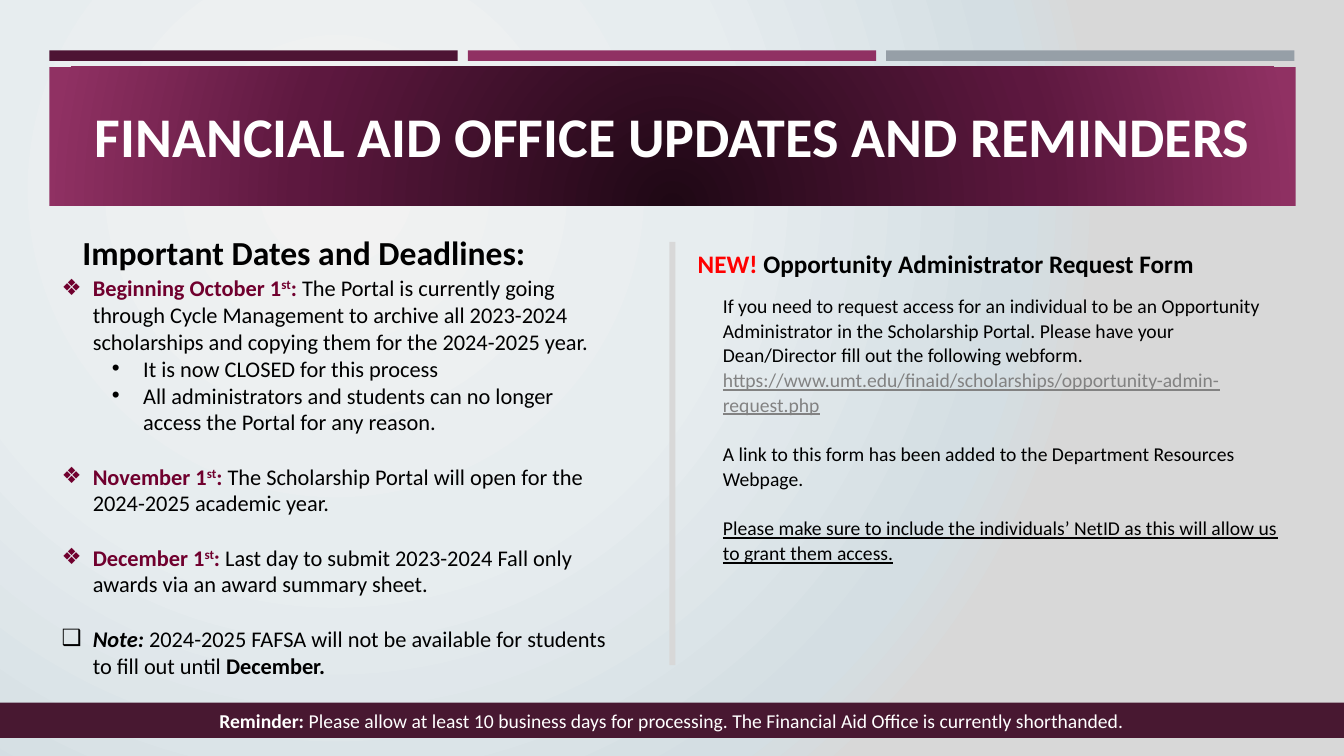
from dataclasses import dataclass, field
from typing import Any

from lxml import etree
from pptx import Presentation
from pptx import util as u
from pptx.dml import color
from pptx.enum import shapes, text
from pptx.oxml import ns

PLUM, MAGENTA, GREY = "4D1434", "903163", "969FA7"
BLACK, WHITE, WINE, SILVER = "000000", "FFFFFF", "70002E", "D8D8D8"


@dataclass
class Box:
    left: float
    top: float
    width: float
    height: float


@dataclass
class Run:
    text: str
    color: str = BLACK
    style: dict[str, Any] = field(default_factory=dict)
    raised: bool = False


@dataclass
class Para:
    runs: list[Run]
    size: float = 16
    bullet: str = ""
    margin: float = 0
    hanging: float = 0
    level: int = 0
    fmt: dict[str, Any] = field(default_factory=dict)


@dataclass
class Panel:
    box: Box
    fill: str


@dataclass
class Gradient:
    stops: list[tuple[int, str]]
    focus: tuple[int, int, int, int]


BOLD = {"bold": True}
UNDERLINE = {"underline": True}
LINE_GAP = {"space_before": u.Pt(19.5)}


def rgb(value: str) -> color.RGBColor:
    return color.RGBColor.from_string(value)


def apply(target: Any, values: dict[str, Any]) -> None:
    for name, value in values.items():
        setattr(target, name, value)


def frame(box: Box) -> dict[str, int]:
    return {
        "left": round(prs.slide_width * box.left / 100),
        "top": round(prs.slide_height * box.top / 100),
        "width": round(prs.slide_width * box.width / 100),
        "height": round(prs.slide_height * box.height / 100),
    }


def draw_panel(panel: Panel) -> Any:
    sp = slide.shapes.add_shape(shapes.MSO_SHAPE.RECTANGLE, **frame(panel.box))
    sp.shadow.inherit = False
    sp.fill.solid()
    sp.fill.fore_color.rgb = rgb(panel.fill)
    sp.line.fill.background()
    return sp


def shade(holder: Any, fill: Any, gradient: Gradient) -> None:
    fill.gradient()
    grad = holder.element.find(".//" + ns.qn("a:gradFill"))
    for child in list(grad):
        grad.remove(child)
    stops = etree.SubElement(grad, ns.qn("a:gsLst"))
    for share, value in gradient.stops:
        stop = etree.SubElement(stops, ns.qn("a:gs"), pos=str(share * 1000))
        etree.SubElement(stop, ns.qn("a:srgbClr"), val=value)
    circle = etree.SubElement(grad, ns.qn("a:path"), path="circle")
    sides = {side: str(share * 1000) for side, share in zip("ltrb", gradient.focus)}
    etree.SubElement(circle, ns.qn("a:fillToRect"), sides)


def write(sp: Any, paras: list[Para], anchor: Any = text.MSO_ANCHOR.TOP) -> None:
    tf = sp.text_frame
    apply(tf, {"word_wrap": True, "auto_size": text.MSO_AUTO_SIZE.NONE,
               "vertical_anchor": anchor})
    for i, para in enumerate(paras):
        p = tf.add_paragraph() if i else tf.paragraphs[0]
        pPr = p._p.get_or_add_pPr()
        pPr.set("marL", str(u.Inches(para.margin)))
        pPr.set("indent", str(u.Inches(-para.hanging)))
        if para.bullet:
            etree.SubElement(pPr, ns.qn("a:buChar"), char=para.bullet)
        else:
            etree.SubElement(pPr, ns.qn("a:buNone"))
        apply(p, {"level": para.level, "space_before": u.Pt(0),
                  "alignment": text.PP_ALIGN.LEFT} | para.fmt)
        for run in para.runs:
            r = p.add_run()
            r.text = run.text
            apply(r.font, {"name": "Calibri", "size": u.Pt(para.size),
                           "bold": False} | run.style)
            r.font.color.rgb = rgb(run.color)
            if run.raised:
                r._r.get_or_add_rPr().set("baseline", "30000")


def item(runs: list[Run], bullet: str = "❖", gap: bool = True) -> Para:
    return Para(runs, bullet=bullet, margin=0.31, hanging=0.31,
                fmt=LINE_GAP if gap else {})


def dated(day: str, detail: str, gap: bool = True) -> Para:
    return item([Run(day, WINE, BOLD), Run("st", WINE, BOLD, True),
                 Run(":", WINE, BOLD), Run(" " + detail)], gap=gap)


def sub_item(detail: str) -> Para:
    return Para([Run(detail)], bullet="•", margin=0.81, hanging=0.31, level=1)


def note(runs: list[Run], gap: float) -> Para:
    return Para(runs, 14, margin=0.25,
                fmt={"line_spacing": 1.05, "space_before": u.Pt(gap)})


prs = Presentation()
apply(prs, {"slide_width": u.Inches(13.33), "slide_height": u.Inches(7.5)})
slide = prs.slides.add_slide(prs.slide_layouts[3])
title, dates, request = slide.placeholders

shade(slide, slide.background.fill, Gradient(
    [(0, "F2F2F2"), (50, "E7EDEF"), (89, "D4DEE3"), (100, SILVER)],
    (50, 50, 100, 100)))

for column, fill in enumerate((PLUM, MAGENTA, GREY)):
    draw_panel(Panel(Box(3.68 + 31.13 * column, 6.67, 30.38, 1.4), fill))

banner = draw_panel(Panel(Box(3.68, 8.8, 92.72, 18.4), MAGENTA))
shade(banner, banner.fill, Gradient(
    [(0, "1F0815"), (60, "5D183F"), (100, MAGENTA)], (50, 130, 50, -30)))

draw_panel(Panel(Box(49.81, 32, 0.45, 56), SILVER))
footer = draw_panel(Panel(Box(0, 92.93, 100, 4.67), "481831"))
heading = slide.shapes.add_textbox(**frame(Box(5.4, 30, 43.66, 9.87)))

for sp, box in (
    (title, Box(4.8, 10.67, 90.47, 14.4)),
    (dates, Box(3.83, 35.6, 42.24, 56.53)),
    (request, Box(51.16, 32, 45.61, 47.73)),
):
    apply(sp, frame(box))
    sp.element.getparent().append(sp.element)

CENTERED = {"alignment": text.PP_ALIGN.CENTER}
write(title, [Para([Run("FINANCIAL AID OFFICE UPDATES AND REMINDERS", WHITE, BOLD)],
                   40, fmt=CENTERED)], text.MSO_ANCHOR.MIDDLE)
write(heading, [Para([Run("Important Dates and Deadlines:", style=BOLD)], 24)])
write(dates, [
    dated("Beginning October 1", "The Portal is currently going through Cycle "
          "Management to archive all 2023-2024 scholarships and copying them for "
          "the 2024-2025 year.", gap=False),
    sub_item("It is now CLOSED for this process"),
    sub_item("All administrators and students can no longer access the Portal "
             "for any reason."),
    dated("November 1", "The Scholarship Portal will open for the 2024-2025 "
          "academic year."),
    dated("December 1", "Last day to submit 2023-2024 Fall only awards via an "
          "award summary sheet."),
    item([Run("Note: ", style=BOLD | {"italic": True}),
          Run("2024-2025 FAFSA will not be available for students to fill out until "),
          Run("December.", style=BOLD)], "❑"),
])
write(request, [
    Para([Run("NEW! ", "FF0000", BOLD),
          Run("Opportunity Administrator Request Form", style=BOLD)],
         18, fmt={"line_spacing": 1.05}),
    note([Run("If you need to request access for an individual to be an Opportunity "
              "Administrator in the Scholarship Portal. Please have your "
              "Dean/Director fill out the following webform. "),
          Run("https://www.umt.edu/finaid/scholarships/opportunity-admin-request.php",
              "828282", UNDERLINE)], 10),
    note([Run("A link to this form has been added to the Department Resources "
              "Webpage.")], 17.75),
    note([Run("Please make sure to include the individuals’ NetID as this will "
              "allow us to grant them access.", style=UNDERLINE)], 17.75),
])
write(footer, [Para([
    Run("Reminder:", WHITE, BOLD),
    Run(" Please allow at least 10 business days for processing. The Financial Aid "
        "Office is currently shorthanded.", WHITE)], 14, fmt=CENTERED)],
    text.MSO_ANCHOR.MIDDLE)

prs.save("out.pptx")
